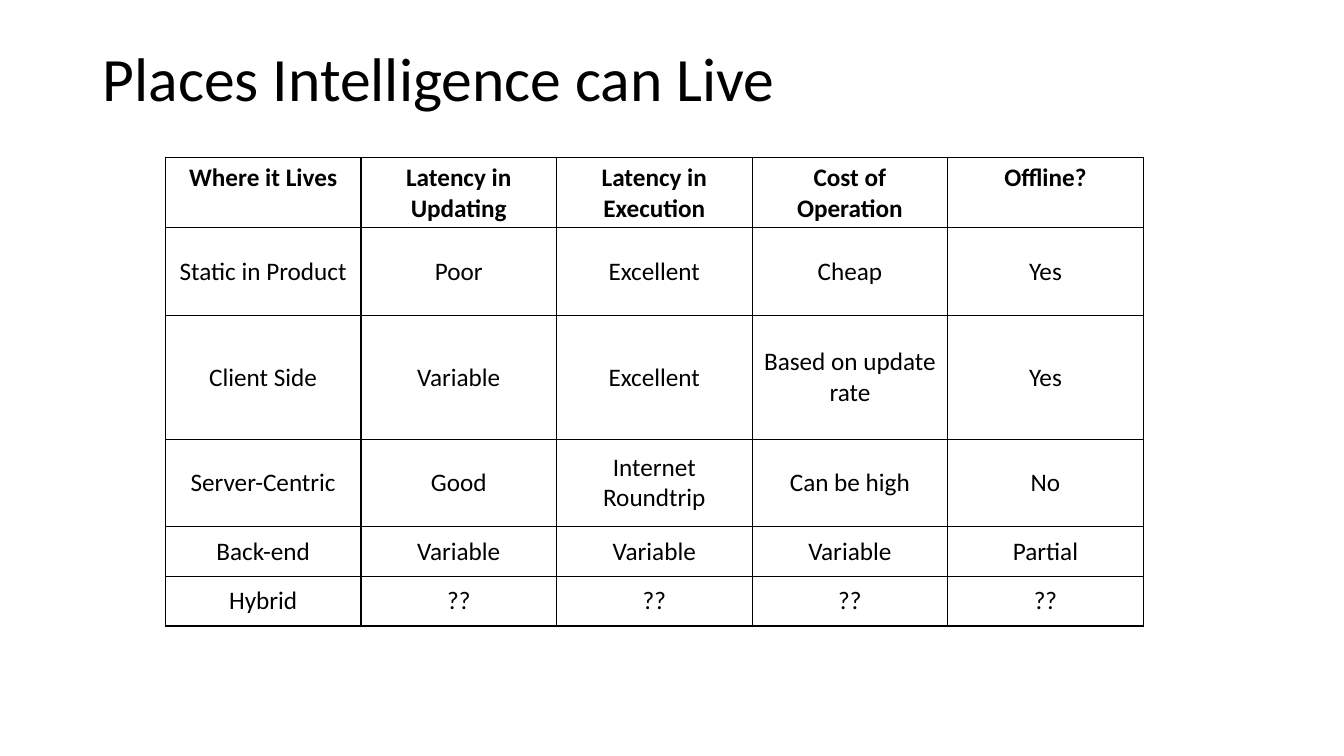
from dataclasses import dataclass
from itertools import accumulate

from lxml.etree import SubElement
from pptx import Presentation
from pptx.dml.color import RGBColor
from pptx.enum.text import MSO_ANCHOR as Anchor, MSO_AUTO_SIZE as AutoSize, PP_ALIGN as Align
from pptx.oxml.ns import qn
from pptx.slide import Slide
from pptx.table import _Cell as Cell
from pptx.text.text import _Paragraph as Paragraph
from pptx.util import Inches, Pt

BLACK = RGBColor(0x00, 0x00, 0x00)
WHITE = RGBColor(0xFF, 0xFF, 0xFF)
FONT = "Calibri"
SLIDE_WIDTH, SLIDE_HEIGHT = Inches(13.33), Inches(7.5)
GRID_LEFT, GRID_TOP, COLUMN_WIDTH = 1.64, 1.56, 1.94
BORDER_WIDTH = Pt(1)


@dataclass(frozen=True)
class Band:
    height: float
    texts: tuple[str, ...]
    header: bool = False


BANDS = (
    Band(0.7, ("Where it Lives", "Latency in Updating", "Latency in Execution",
               "Cost of Operation", "Offline?"), header=True),
    Band(0.87, ("Static in Product", "Poor", "Excellent", "Cheap", "Yes")),
    Band(1.23, ("Client Side", "Variable", "Excellent", "Based on update rate", "Yes")),
    Band(0.86, ("Server-Centric", "Good", "Internet Roundtrip", "Can be high", "No")),
    Band(0.5, ("Back-end", "Variable", "Variable", "Variable", "Partial")),
    Band(0.49, ("Hybrid", "??", "??", "??", "??")),
)


def style_paragraph(paragraph: Paragraph, size: int, alignment: Align, bold: bool = False) -> None:
    paragraph.alignment = alignment
    paragraph.font.name = FONT
    paragraph.font.size = Pt(size)
    paragraph.font.bold = bold
    paragraph.font.color.rgb = BLACK


def add_borders(cell: Cell) -> None:
    properties = cell._tc.get_or_add_tcPr()
    for side in ("lnL", "lnR", "lnT", "lnB"):
        line = SubElement(properties, qn(f"a:{side}"), w=str(BORDER_WIDTH))
        fill = SubElement(line, qn("a:solidFill"))
        SubElement(fill, qn("a:srgbClr"), val=str(BLACK))


def add_title(slide: Slide, text: str) -> None:
    title = slide.shapes.title
    title.left, title.top = int(SLIDE_WIDTH * 0.069), int(SLIDE_HEIGHT * 0.053)
    title.width, title.height = int(SLIDE_WIDTH * 0.863), int(SLIDE_HEIGHT * 0.109)
    frame = title.text_frame
    frame.text = text
    frame.auto_size = AutoSize.NONE
    frame.vertical_anchor = Anchor.MIDDLE
    paragraph = frame.paragraphs[0]
    style_paragraph(paragraph, 44, Align.LEFT)
    paragraph.line_spacing = 0.9


def add_band(slide: Slide, band: Band, top: float) -> None:
    count = len(band.texts)
    table = slide.shapes.add_table(
        1, count, Inches(GRID_LEFT), Inches(top),
        Inches(COLUMN_WIDTH * count), Inches(band.height)).table
    table.first_row = table.horz_banding = False
    for column, cell, text in zip(table.columns, table.iter_cells(), band.texts):
        column.width = Inches(COLUMN_WIDTH)
        add_borders(cell)
        cell.fill.solid()
        cell.fill.fore_color.rgb = WHITE
        cell.text = text
        cell.vertical_anchor = Anchor.TOP if band.header else Anchor.MIDDLE
        style_paragraph(cell.text_frame.paragraphs[0], 18, Align.CENTER, band.header)


def main() -> None:
    presentation = Presentation()
    presentation.slide_width, presentation.slide_height = SLIDE_WIDTH, SLIDE_HEIGHT
    slide = presentation.slides.add_slide(presentation.slide_layouts.get_by_name("Title Only"))
    add_title(slide, "Places Intelligence can Live")
    tops = accumulate((band.height for band in BANDS), initial=GRID_TOP)
    for band, top in zip(BANDS, tops):
        add_band(slide, band, top)
    presentation.save("out.pptx")


if __name__ == "__main__":
    main()
